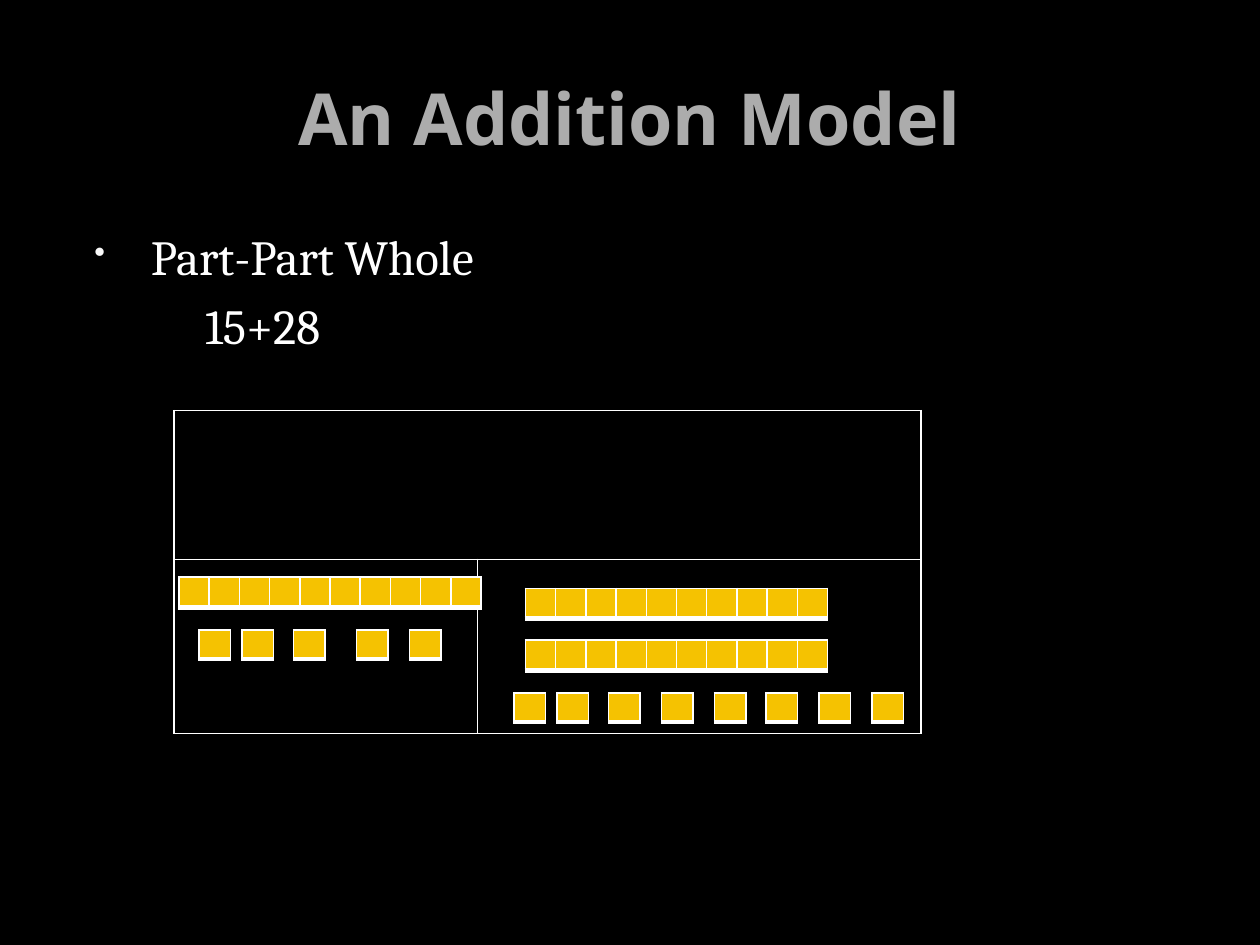
import pptx
import pptx.dml.color
import pptx.enum.text
import pptx.oxml.ns
import pptx.util
from lxml import etree
from pptx.util import Inches, Pt

TITLE = "An Addition Model"
MODEL_NAME = "Part-Part Whole"
PROBLEM = "15+28"

WHITE, GREY, GOLD, BLACK = "FFFFFF", "ACACAC", "F5C201", "000000"

# Whole on top, the two parts below
FRAME_LEFT, FRAME_TOP = 1.38, 3.26
FRAME_COLUMNS, FRAME_ROWS = [2.41, 3.52], [1.18, 1.38]

# Base-ten pieces: rods of ten as (left, top), loose ones as top: lefts
RODS = [(1.42, 4.58), (4.17, 4.67), (4.17, 5.08)]
ONES = {
    5.0: [1.58, 1.92, 2.33, 2.83, 3.25],
    5.5: [4.08, 4.42, 4.83, 5.25, 5.67, 6.08, 6.5, 6.92],
}


def color(value):
    return pptx.dml.color.RGBColor.from_string(value)


def add_xml(parent, tag, **attributes):
    return etree.SubElement(parent, pptx.oxml.ns.qn(tag), attributes)


def add_border(cell, side, width):
    line = add_xml(cell._tc.get_or_add_tcPr(), f"a:ln{side}", w=str(Pt(width)))
    add_xml(add_xml(line, "a:solidFill"), "a:srgbClr", val=WHITE)


def add_grid(left, top, columns, rows, bottom=1, fill=None):
    frame = slide.shapes.add_table(
        len(rows), len(columns), Inches(left), Inches(top),
        Inches(sum(columns)), Inches(sum(rows)))
    grid = frame.table
    grid.first_row = grid.horz_banding = False
    for column, width in zip(grid.columns, columns):
        column.width = Inches(width)
    for row, height in zip(grid.rows, rows):
        row.height = Inches(height)
    for cell in grid.iter_cells():
        cell.margin_left = cell.margin_right = 0
        cell.margin_top = cell.margin_bottom = 0
        for side in "LRT":
            add_border(cell, side, 1)
        add_border(cell, "B", bottom)
        if fill:
            cell.fill.solid()
            cell.fill.fore_color.rgb = color(fill)
        else:
            cell.fill.background()
        # A small size keeps empty cells from stretching their row
        add_xml(cell.text_frame.paragraphs[0]._p, "a:endParaRPr", sz="800")
    return grid


def add_text(left, top, width, height, lines, font, size, ink, bold=False):
    frame = slide.shapes.add_textbox(
        Inches(left), Inches(top), Inches(width), Inches(height)).text_frame
    frame.word_wrap = True
    frame.text = "\n".join(lines)
    for paragraph in frame.paragraphs:
        paragraph.font.name = font
        paragraph.font.size = Pt(size)
        paragraph.font.bold = bold
        paragraph.font.color.rgb = color(ink)
    return frame


presentation = pptx.Presentation()
presentation.slide_width, presentation.slide_height = Inches(10), Inches(7.5)
slide = presentation.slides.add_slide(presentation.slide_layouts[6])
slide.background.fill.solid()
slide.background.fill.fore_color.rgb = color(BLACK)

# Title
title = add_text(0.5, 0.3, 9, 1.25, [TITLE], "Open Sans", 41, GREY, bold=True)
title.vertical_anchor = pptx.enum.text.MSO_ANCHOR.MIDDLE
title.paragraphs[0].alignment = pptx.enum.text.PP_ALIGN.CENTER

# Model name with a bullet, problem indented below it
body = add_text(0.5, 1.75, 9, 5.15, [MODEL_NAME, PROBLEM], "Cambria", 28, WHITE)
model_name, problem = body.paragraphs
for paragraph, margin, indent in [(model_name, 0.6, -0.45), (problem, 1.03, 0)]:
    paragraph.space_before = Pt(5.6)
    properties = paragraph._p.get_or_add_pPr()
    properties.set("marL", str(Inches(margin)))
    properties.set("indent", str(Inches(indent)))
bullet_color = pptx.oxml.ns.qn("a:buClr")
properties = model_name._p.get_or_add_pPr()
bullet = [etree.Element(bullet_color),
          etree.Element(pptx.oxml.ns.qn("a:buSzPct"), val="65000"),
          etree.Element(pptx.oxml.ns.qn("a:buChar"), char="•")]
add_xml(bullet[0], "a:srgbClr", val="F9F9F9")
for part in bullet:
    properties.find(pptx.oxml.ns.qn("a:defRPr")).addprevious(part)

# Part-part-whole frame
frame = add_grid(FRAME_LEFT, FRAME_TOP, FRAME_COLUMNS, FRAME_ROWS)
frame.cell(0, 0).merge(frame.cell(0, 1))

# Rods and ones
for left, top in RODS:
    add_grid(left, top, [0.24] * 10, [0.24], bottom=3, fill=GOLD)
for top, lefts in ONES.items():
    for left in lefts:
        add_grid(left, top, [0.25], [0.23], bottom=3, fill=GOLD)

presentation.save("out.pptx")
